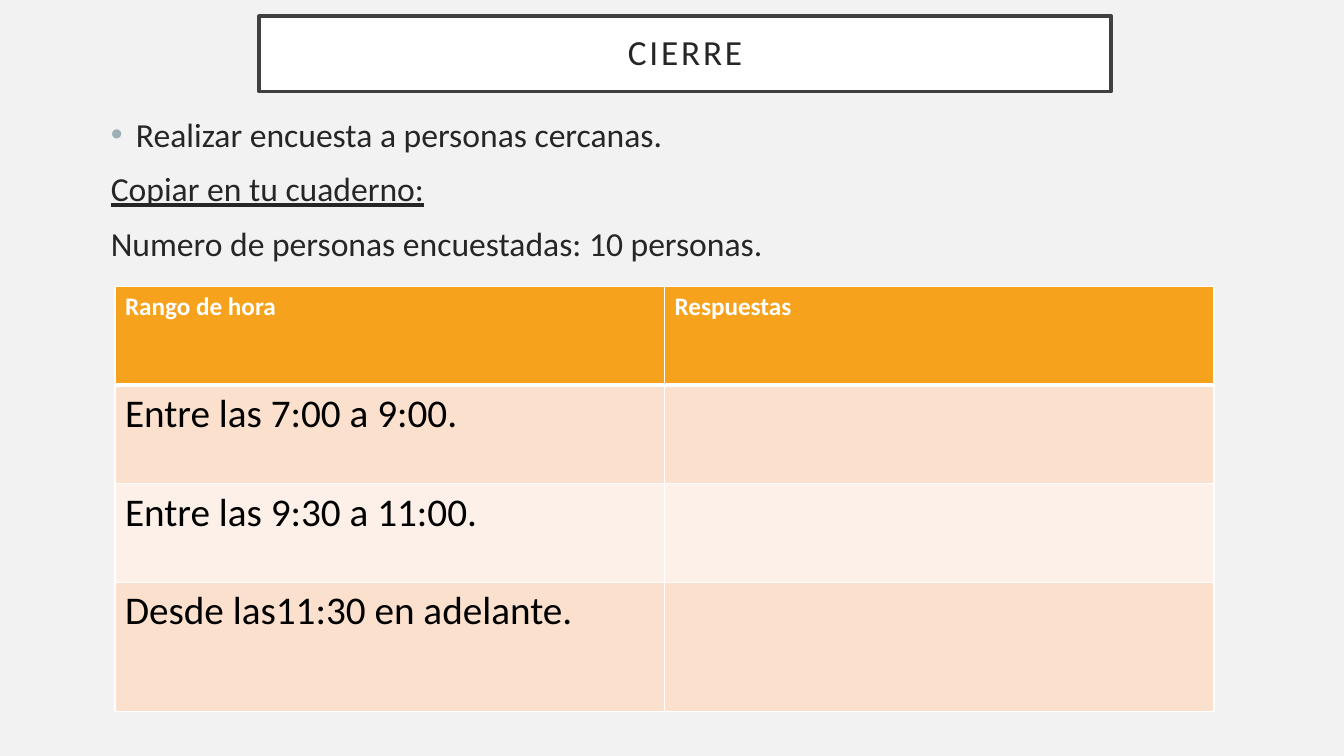
from dataclasses import dataclass

from lxml.etree import SubElement
from pptx import Presentation
from pptx.dml.color import RGBColor
from pptx.enum.text import MSO_ANCHOR, MSO_AUTO_SIZE, PP_ALIGN
from pptx.oxml.ns import qn
from pptx.slide import Slide
from pptx.table import _Cell as Cell
from pptx.text.text import _Paragraph as Paragraph
from pptx.util import Inches, Pt

FONT = "Calibri"
BACKGROUND = RGBColor(0xF2, 0xF2, 0xF2)
WHITE = RGBColor(0xFF, 0xFF, 0xFF)
BLACK = RGBColor(0x00, 0x00, 0x00)
FRAME = RGBColor(0x40, 0x40, 0x40)
INK = RGBColor(0x26, 0x26, 0x26)
BULLET = RGBColor(0x9B, 0xAF, 0xB5)
ORANGE = RGBColor(0xF6, 0xA2, 0x1D)
PEACH = RGBColor(0xFB, 0xE0, 0xCD)
CREAM = RGBColor(0xFD, 0xF0, 0xE8)


@dataclass(frozen=True)
class TextStyle:
    size: float
    color: RGBColor
    bold: bool = False
    underline: bool = False


@dataclass(frozen=True)
class Instruction:
    text: str
    bulleted: bool = False
    underline: bool = False


@dataclass(frozen=True)
class SurveyRow:
    texts: tuple[str, str]
    height: float
    fill: RGBColor
    style: TextStyle
    bottom_border: float = 1


HEADER_STYLE = TextStyle(18, WHITE, bold=True)
RANGE_STYLE = TextStyle(28, BLACK)

INSTRUCTIONS = (
    Instruction("Realizar encuesta a personas cercanas.", bulleted=True),
    Instruction("Copiar en tu cuaderno:", underline=True),
    Instruction("Numero de personas encuestadas: 10 personas."),
)
SURVEY_ROWS = (
    SurveyRow(("Rango de hora", "Respuestas"), 0.98, ORANGE, HEADER_STYLE, 3),
    SurveyRow(("Entre las 7:00 a 9:00.", ""), 0.98, PEACH, RANGE_STYLE),
    SurveyRow(("Entre las 9:30 a 11:00.", ""), 0.98, CREAM, RANGE_STYLE),
    SurveyRow(("Desde las11:30 en adelante.", ""), 1.28, PEACH, RANGE_STYLE),
)


def add_run(paragraph: Paragraph, text: str, style: TextStyle, spacing: float = 0) -> None:
    run = paragraph.add_run()
    run.text = text
    run.font.name = FONT
    run.font.size = Pt(style.size)
    run.font.color.rgb = style.color
    run.font.bold = style.bold
    run.font.underline = style.underline
    if spacing:
        run.font._element.set("spc", str(int(spacing * 100)))


def add_bullet(paragraph: Paragraph) -> None:
    properties = paragraph._p.get_or_add_pPr()
    properties.set("marL", str(Inches(0.25)))
    properties.set("indent", str(Inches(-0.25)))
    color = SubElement(properties, qn("a:buClr"))
    SubElement(color, qn("a:srgbClr"), val=str(BULLET))
    SubElement(properties, qn("a:buFont"), typeface="Arial")
    SubElement(properties, qn("a:buChar"), char="•")


def set_borders(cell: Cell, bottom: float, top: float) -> None:
    properties = cell._tc.get_or_add_tcPr()
    for side, width in (("L", 1), ("R", 1), ("T", top), ("B", bottom)):
        line = SubElement(properties, qn(f"a:ln{side}"), w=str(Pt(width)))
        fill = SubElement(line, qn("a:solidFill"))
        SubElement(fill, qn("a:srgbClr"), val=str(WHITE))


def format_title(slide: Slide) -> None:
    title = slide.shapes.title
    title.left, title.top = Inches(2.57), Inches(0.16)
    title.width, title.height = Inches(8.45), Inches(0.75)
    title.fill.solid()
    title.fill.fore_color.rgb = WHITE
    title.line.color.rgb = FRAME
    title.line.width = Pt(2.5)
    frame = title.text_frame
    frame.auto_size = MSO_AUTO_SIZE.NONE
    frame.vertical_anchor = MSO_ANCHOR.MIDDLE
    frame.margin_left = frame.margin_right = Inches(0.2)
    frame.margin_top = frame.margin_bottom = Inches(0.2)
    paragraph = frame.paragraphs[0]
    paragraph.alignment = PP_ALIGN.CENTER
    paragraph.line_spacing = 0.9
    add_run(paragraph, "CIERRE", TextStyle(25.2, INK), spacing=2)


def add_instructions(slide: Slide) -> None:
    box = slide.shapes.add_textbox(Inches(1), Inches(1.08), Inches(8.45), Inches(3.97))
    frame = box.text_frame
    frame.word_wrap = True
    for index, instruction in enumerate(INSTRUCTIONS):
        paragraph = frame.add_paragraph() if index else frame.paragraphs[0]
        paragraph.space_before = Pt(10)
        if instruction.bulleted:
            add_bullet(paragraph)
        add_run(paragraph, instruction.text, TextStyle(24, INK, underline=instruction.underline))


def add_survey_table(slide: Slide) -> None:
    height = sum(row.height for row in SURVEY_ROWS)
    table = slide.shapes.add_table(
        len(SURVEY_ROWS), 2, Inches(1.14), Inches(2.84), Inches(10.9), Inches(height)
    ).table
    top_border = 1
    for row_index, row in enumerate(SURVEY_ROWS):
        table.rows[row_index].height = Inches(row.height)
        for column_index, text in enumerate(row.texts):
            cell = table.cell(row_index, column_index)
            set_borders(cell, row.bottom_border, top_border)
            cell.fill.solid()
            cell.fill.fore_color.rgb = row.fill
            if text:
                add_run(cell.text_frame.paragraphs[0], text, row.style)
        top_border = row.bottom_border


def main() -> None:
    presentation = Presentation()
    presentation.slide_width = Inches(13.33)
    presentation.slide_height = Inches(7.5)
    title_only = presentation.slide_layouts[5]
    slide = presentation.slides.add_slide(title_only)
    slide.background.fill.solid()
    slide.background.fill.fore_color.rgb = BACKGROUND

    # Heading, instructions and survey
    format_title(slide)
    add_instructions(slide)
    add_survey_table(slide)
    presentation.save("out.pptx")


if __name__ == "__main__":
    main()
